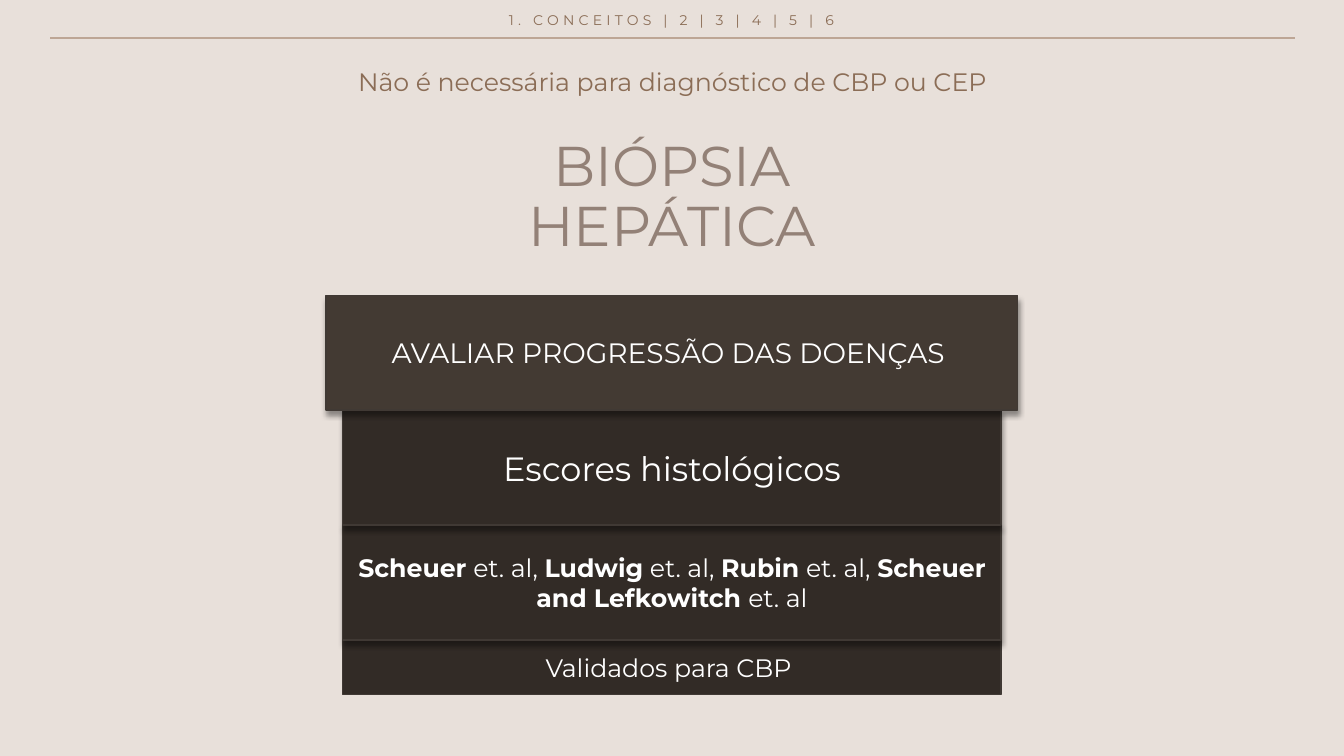
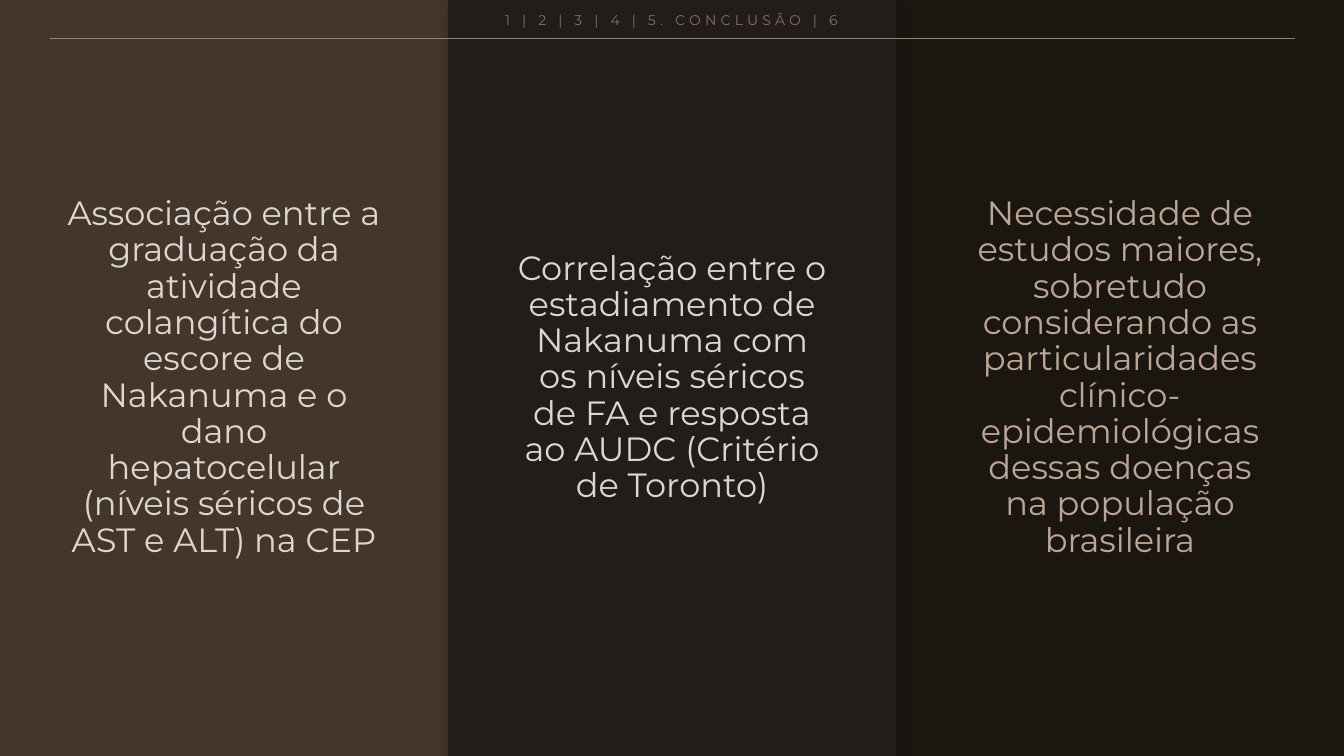
import pptx
import pptx.util
import pptx.dml.color
import pptx.enum.shapes
import pptx.enum.text
import pptx.oxml
import pptx.oxml.ns
from lxml import etree

Inches, Pt = pptx.util.Inches, pptx.util.Pt
qn = pptx.oxml.ns.qn
CENTER = pptx.enum.text.PP_ALIGN.CENTER
MIDDLE = pptx.enum.text.MSO_ANCHOR.MIDDLE
FIT = pptx.enum.text.MSO_AUTO_SIZE

WIDE, HIGH = 13.33, 7.5
FONT = "Montserrat"
PAPER, SAND, TAUPE, BROWN = "E8E0DA", "BDA695", "938177", "8B6D56"
WHITE, PALE = "FFFFFF", "DDD7D2"
DARK, LIGHT, EDGE = "322B26", "433A33", "403934"

# Steps from top to bottom: runs (text, bold), size, width, height, fill
STEPS = [
    ([("AVALIAR PROGRESSÃO DAS DOENÇAS ", False)], 20, 6.86, 1.14, LIGHT),
    ([("Escores histológicos", False)], 24, 6.53, 1.14, DARK),
    ([("Scheuer", True), (" et. al, ", False), ("Ludwig", True),
      (" et. al, ", False), ("Rubin", True), (" et. al, ", False),
      ("Scheuer and Lefkowitch ", True), ("et. al", False)],
     18, 6.53, 1.14, DARK),
    ([("Validados para CBP ", False)], 18, 6.53, 0.54, DARK),
]
STEP_TOP = 2.93
STEP_SHADOW = (40, 4, 3)  # opacity %, blur pt, distance pt

# Panels in drawing order: column, fill, text colour, text
PANELS = [
    (0, "45362B", PALE,
     "Associação entre a graduação da atividade colangítica do escore de "
     "Nakanuma e o dano hepatocelular (níveis séricos de AST e ALT) na CEP"),
    (2, "1C1611", SAND,
     "Necessidade de estudos maiores, sobretudo considerando as "
     "particularidades clínico-epidemiológicas dessas doenças na população "
     "brasileira"),
    (1, "221D1A", PALE,
     "Correlação entre o estadiamento de Nakanuma com os níveis séricos de "
     "FA e resposta ao AUDC (Critério de Toronto)"),
]
PANEL_SHADOW = (18, 10, 9)


def rgb(code):
    return pptx.dml.color.RGBColor.from_string(code)


def place(shape, left, top, width, height):
    shape.left, shape.top = Inches(left), Inches(top)
    shape.width, shape.height = Inches(width), Inches(height)


def write(shape, runs, size, color, tight=False, before=0, track=0):
    """Fill a shape with one centred paragraph; track is letter spacing."""
    frame = shape.text_frame
    frame.word_wrap = True
    frame.auto_size = FIT.NONE
    frame.vertical_anchor = MIDDLE
    para = frame.paragraphs[0]
    para.alignment = CENTER
    para.space_before = Pt(before)
    if tight:
        para.line_spacing = 0.9
    for text, bold in runs:
        run = para.add_run()
        run.text = text
        run.font.name, run.font.size = FONT, Pt(size)
        run.font.bold = bold
        run.font.color.rgb = rgb(color)
        if track:
            run.font._element.set("spc", str(track * 100))


def inset(shape, side, end):
    frame = shape.text_frame
    frame.margin_left = frame.margin_right = Inches(side)
    frame.margin_top = frame.margin_bottom = Inches(end)


def box(slide, left, top, width, height, fill, shadow=None, edge=None):
    shape = slide.shapes.add_shape(
        pptx.enum.shapes.MSO_SHAPE.RECTANGLE,
        Inches(left), Inches(top), Inches(width), Inches(height))
    shape.fill.solid()
    shape.fill.fore_color.rgb = rgb(fill)
    if edge:
        shape.line.color.rgb = rgb(edge)
        shape.line.width = Pt(1)
    else:
        shape.line.fill.background()
    shape.shadow.inherit = False
    if shadow:
        cast(shape, *shadow)
    return shape


def cast(shape, alpha, blur, dist):
    """Add a black shadow that falls straight down."""
    effects = shape.element.spPr.find(qn("a:effectLst"))
    outer = etree.SubElement(
        effects, qn("a:outerShdw"), blurRad=str(Pt(blur)),
        dist=str(Pt(dist)), dir="5400000", algn="ctr", rotWithShape="0")
    black = etree.SubElement(outer, qn("a:srgbClr"), val="000000")
    etree.SubElement(black, qn("a:alpha"), val=str(alpha * 1000))


def rule(slide, color, width):
    """Draw the line under the section trail."""
    line = slide.shapes.add_connector(
        pptx.enum.shapes.MSO_CONNECTOR.STRAIGHT,
        Inches(0.5), Inches(0.38), Inches(12.84), Inches(0.38))
    line.line.color.rgb = rgb(color)
    line.line.width = Pt(width)
    etree.SubElement(line.element.spPr, qn("a:effectLst"))
    return line


def trail(slide, text):
    """Write the section trail in the body placeholder, in front."""
    body = slide.placeholders[1]
    place(body, 0.49, 0.08, 12.34, 0.25)
    write(body, [(text, False)], 10, BROWN, tight=True, before=10, track=3)
    slide.shapes.element.append(body.element)


def biopsy(slide):
    bottom = STEP_TOP + sum(step[3] for step in STEPS)
    for step in reversed(STEPS):
        runs, size, width, height, fill = step
        bottom -= height
        shadow = None if step is STEPS[-1] else STEP_SHADOW
        shape = box(slide, (WIDE - width) / 2, bottom, width, height, fill,
                    shadow, EDGE)
        inset(shape, 0.04, 0.04)
        write(shape, runs, size, WHITE)
    trail(slide, "1. CONCEITOS | 2 | 3 | 4 | 5 | 6")
    title = slide.shapes.title
    place(title, 4.82, 1.01, 3.69, 1.92)
    write(title, [("BIÓPSIA HEPÁTICA", False)], 40, TAUPE, tight=True)
    note = slide.shapes.add_textbox(
        Inches(3.41), Inches(0.61), Inches(6.52), Inches(0.4))
    write(note, [("Não é necessária para diagnóstico de CBP ou CEP", False)],
          18, BROWN)
    note.text_frame.word_wrap = False
    note.text_frame.auto_size = FIT.SHAPE_TO_FIT_TEXT


def closing(slide):
    title = slide.shapes.title.element
    title.getparent().remove(title)
    width = WIDE / len(PANELS)
    for col, fill, color, text in PANELS:
        shape = box(slide, col * width, 0, width, HIGH, fill, PANEL_SHADOW)
        inset(shape, 0.67, 0.12)
        write(shape, [(text, False)], 24, color, tight=True, before=10)
    trail(slide, "1 | 2 | 3 | 4 | 5. CONCLUSÃO | 6")
    rule(slide, TAUPE, 0.25)


def main():
    deck = pptx.Presentation()
    deck.slide_width, deck.slide_height = Inches(WIDE), Inches(HIGH)
    master = deck.slide_master
    master.background.fill.solid()
    master.background.fill.fore_color.rgb = rgb(PAPER)
    layout = deck.slide_layouts.get_by_name("Section Header")
    first, last = [deck.slides.add_slide(layout) for _ in range(2)]
    # The line is moved to the master, so every slide shows it
    master.shapes.element.append(rule(first, SAND, 1.5).element)
    biopsy(first)
    closing(last)
    deck.save("out.pptx")


if __name__ == "__main__":
    main()
